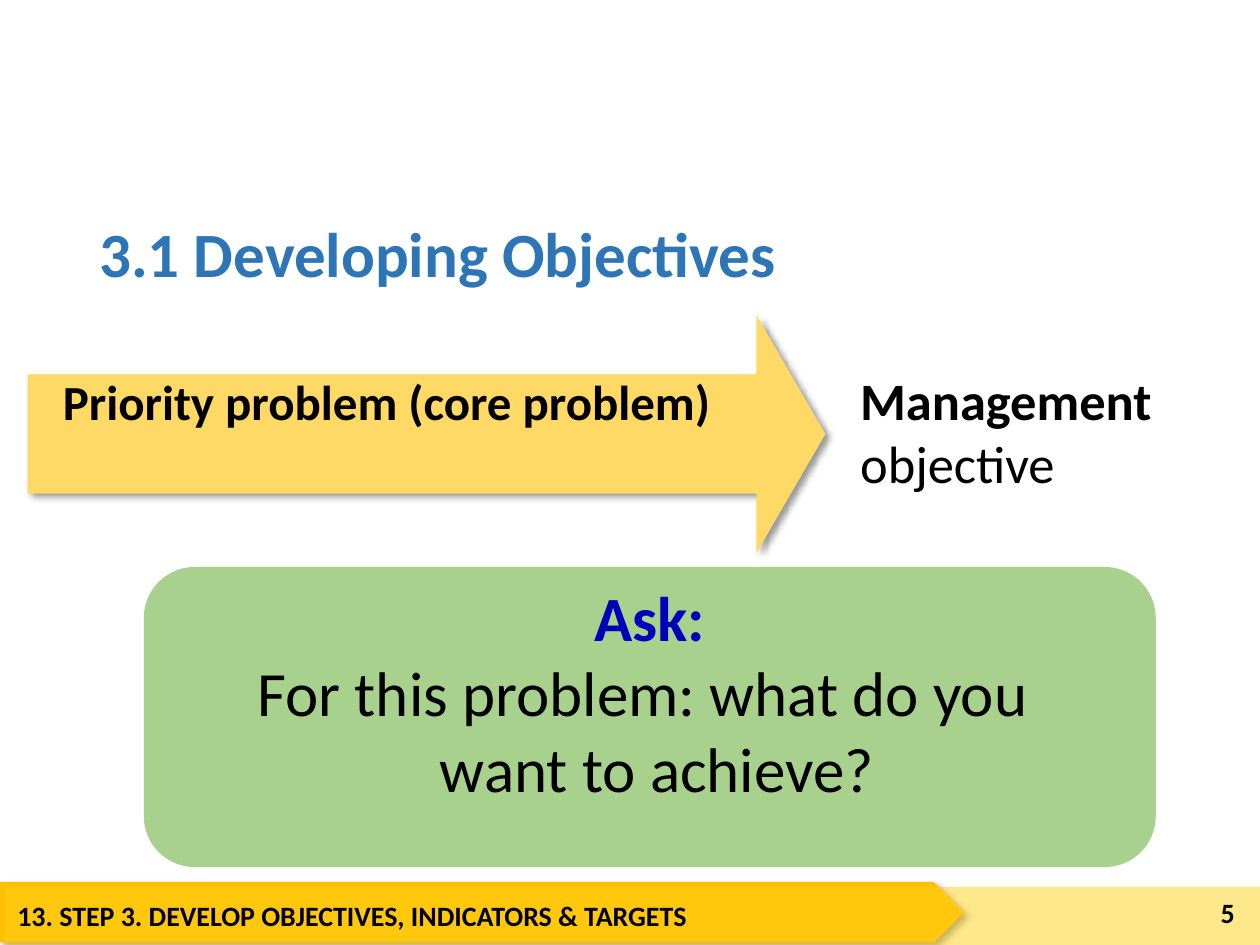
from lxml.etree import SubElement
from pptx import Presentation
from pptx.dml.color import RGBColor
from pptx.enum.shapes import MSO_SHAPE as Shape
from pptx.enum.text import MSO_ANCHOR as Anchor, PP_ALIGN as Align
from pptx.oxml.ns import qn
from pptx.util import Cm, Pt

AMBER = RGBColor(0xFF, 0xC0, 0x00)
GOLD = RGBColor(0xFF, 0xD0, 0x1B)
YELLOW = RGBColor(0xFF, 0xD9, 0x66)
GREEN = RGBColor(0xA9, 0xD1, 0x8E)
BLUE = RGBColor(0x2E, 0x75, 0xB6)
NAVY = RGBColor(0x00, 0x00, 0xBA)
BLACK = RGBColor(0x00, 0x00, 0x00)


class Slide:
    font = "Calibri"

    def __init__(self, page):
        self.page = page

    def shape(self, kind, left, top, width, height, color, adjust=()):
        shape = self.page.shapes.add_shape(kind, Cm(left), Cm(top), Cm(width), Cm(height))
        shape.shadow.inherit = False
        shape.fill.solid()
        shape.fill.fore_color.rgb = color
        shape.line.fill.background()
        for index, value in enumerate(adjust):
            shape.adjustments[index] = value
        return shape

    def cast_shadow(self, shape):
        effects = shape._element.spPr.find(qn("a:effectLst"))
        shadow = SubElement(effects, qn("a:outerShdw"), blurRad=str(Pt(4)),
                            dist=str(Pt(3)), dir="2700000", algn="tl", rotWithShape="0")
        color = SubElement(shadow, qn("a:srgbClr"), val="000000")
        SubElement(color, qn("a:alpha"), val="40000")

    def make_translucent(self, shape, percent):
        color = shape._element.spPr.find(qn("a:solidFill"))[0]
        SubElement(color, qn("a:alpha"), val=str(percent * 1000))

    def style(self, para, size, color=BLACK, bold=True, align=Align.LEFT):
        para.alignment = align
        para.font.name = self.font
        para.font.size = Pt(size)
        para.font.color.rgb = color
        para.font.bold = bold

    def text(self, words, left, top, width, height, size, color=BLACK,
             align=Align.LEFT, anchor=Anchor.TOP, spacing=None):
        box = self.page.shapes.add_textbox(Cm(left), Cm(top), Cm(width), Cm(height))
        frame = box.text_frame
        frame.word_wrap = True
        frame.vertical_anchor = anchor
        para = frame.paragraphs[0]
        para.text = words
        para.line_spacing = spacing
        self.style(para, size, color, align=align)
        return frame

    def question(self, shape, heading, lines, size):
        frame = shape.text_frame
        frame.word_wrap = False
        frame.vertical_anchor = Anchor.MIDDLE
        frame.margin_bottom = Cm(1.15)
        para = frame.paragraphs[0]
        para.text = heading
        self.style(para, size, NAVY, align=Align.CENTER)
        for line in lines:
            para = frame.add_paragraph()
            para.text = line
            self.style(para, size, bold=False, align=Align.CENTER)


def main():
    deck = Presentation()
    deck.slide_width, deck.slide_height = Cm(25.4), Cm(19.05)
    slide = Slide(deck.slides.add_slide(deck.slide_layouts[6]))

    banner = slide.shape(Shape.PENTAGON, 0, 17.78, 19.43, 1.22, AMBER)
    slide.cast_shadow(banner)
    strip = slide.shape(Shape.RECTANGLE, 0.1, 17.88, 25.3, 1.17, GOLD)
    slide.make_translucent(strip, 50)
    slide.text("13. STEP 3. DEVELOP OBJECTIVES, INDICATORS & TARGETS",
               0.1, 17.98, 19.05, 1.04, 16)
    slide.text("5", 23.29, 17.88, 1.85, 1.02, 16, align=Align.RIGHT, anchor=Anchor.MIDDLE)

    slide.text("3.1 Developing Objectives", 1.75, 4.14, 21.9, 2.08, 36, BLUE,
               anchor=Anchor.MIDDLE, spacing=0.9)

    arrow = slide.shape(Shape.RIGHT_ARROW, 0.56, 6.35, 16.08, 4.8, YELLOW, (0.5, 0.29))
    slide.cast_shadow(arrow)
    slide.text("Priority problem (core problem)", 1.02, 7.67, 14.4, 1.83, 28, spacing=Pt(25))

    goal = slide.text("Management\vobjective", 17.09, 7.29, 8.3, 3.05, 30)
    goal.paragraphs[0].runs[1].font.bold = False

    panel = slide.shape(Shape.ROUNDED_RECTANGLE, 2.9, 11.43, 20.4, 6.05, GREEN, (0.17,))
    slide.question(panel, "Ask:", ["For this problem: what do you ", " want to achieve?"], 36)

    deck.save("out.pptx")


if __name__ == "__main__":
    main()
